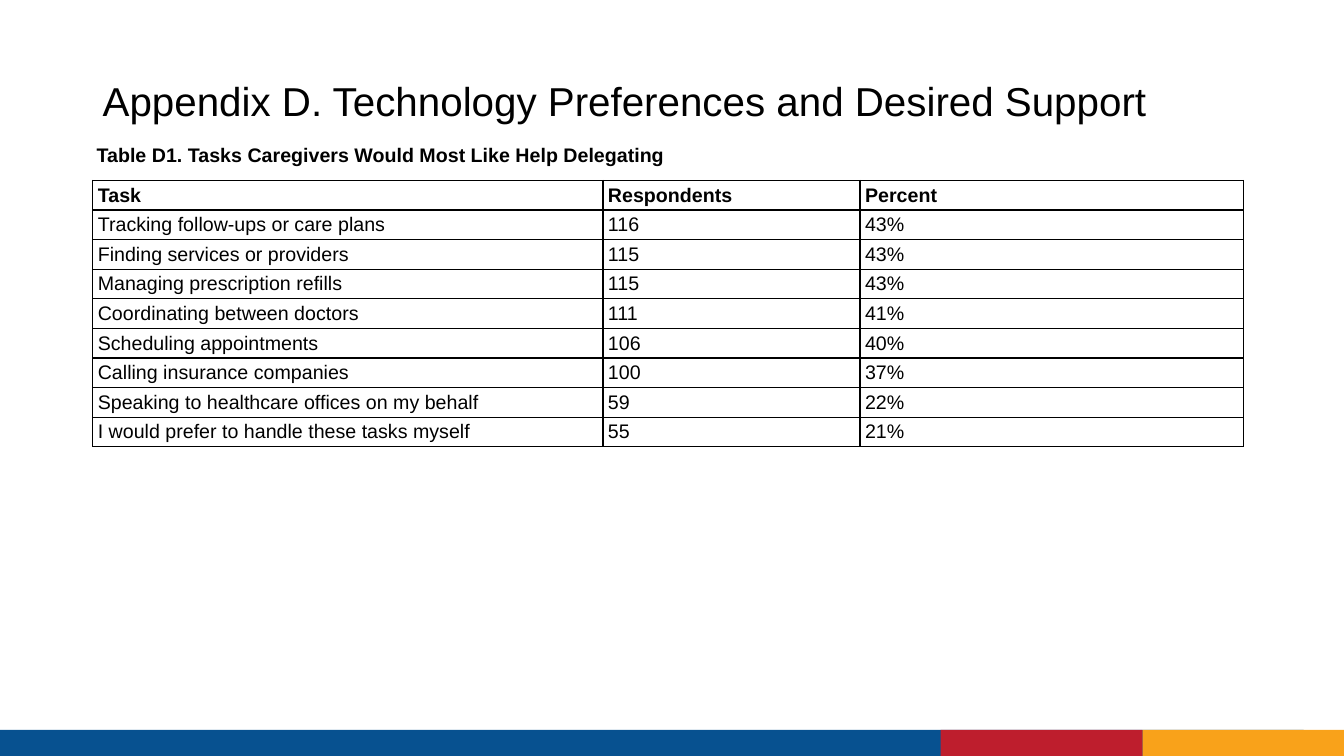
from lxml.etree import SubElement
from pptx import Presentation
from pptx.dml.color import RGBColor
from pptx.enum.shapes import MSO_SHAPE
from pptx.enum.text import MSO_ANCHOR
from pptx.oxml.ns import qn
from pptx.util import Inches, Pt

TASKS = [
    ("Task", "Respondents", "Percent"),
    ("Tracking follow-ups or care plans", "116", "43%"),
    ("Finding services or providers", "115", "43%"),
    ("Managing prescription refills", "115", "43%"),
    ("Coordinating between doctors", "111", "41%"),
    ("Scheduling appointments", "106", "40%"),
    ("Calling insurance companies", "100", "37%"),
    ("Speaking to healthcare offices on my behalf", "59", "22%"),
    ("I would prefer to handle these tasks myself", "55", "21%"),
]
COLUMN_WIDTHS = (5.06, 2.55, 3.8)


def rgb(value):
    return RGBColor.from_string(value)


def write(tf, text, size=14, bold=False, color="000000", spacing=None):
    p = tf.paragraphs[0]
    p.line_spacing = spacing
    r = p.add_run()
    r.text = text
    r.font.name = "Arial"
    r.font.size = Pt(size)
    r.font.bold = bold
    r.font.color.rgb = rgb(color)


def add_text(s, left, top, width, height, text, anchor=MSO_ANCHOR.TOP, **fmt):
    box = s.shapes.add_textbox(*map(Inches, (left, top, width, height)))
    tf = box.text_frame
    tf.word_wrap = True
    tf.vertical_anchor = anchor
    write(tf, text, **fmt)


def add_band(s, left, width, color):
    sp = s.shapes.add_shape(MSO_SHAPE.RECTANGLE, Inches(left), Inches(7.24),
                            Inches(width), Inches(0.27))
    sp.shadow.inherit = False
    sp.fill.solid()
    sp.fill.fore_color.rgb = rgb(color)
    sp.line.fill.background()


def add_borders(cell, color="000000", width=1):
    tcPr = cell._tc.get_or_add_tcPr()
    for i, side in enumerate(("a:lnL", "a:lnR", "a:lnT", "a:lnB")):
        ln = tcPr.makeelement(qn(side), {"w": str(Pt(width))})
        fill = SubElement(ln, qn("a:solidFill"))
        SubElement(fill, qn("a:srgbClr"), val=color)
        tcPr.insert(i, ln)


def format_cell(cell, text, bold):
    cell.fill.background()
    cell.margin_left = cell.margin_right = Inches(0.05)
    cell.margin_top = cell.margin_bottom = Inches(0.03)
    cell.vertical_anchor = MSO_ANCHOR.MIDDLE
    write(cell.text_frame, text, bold=bold)
    add_borders(cell)


def add_task_table(s):
    table = s.shapes.add_table(len(TASKS), len(COLUMN_WIDTHS), Inches(0.92), Inches(1.79),
                               Inches(sum(COLUMN_WIDTHS)), Inches(2.57)).table
    table.horz_banding = False
    for column, width in zip(table.columns, COLUMN_WIDTHS):
        column.width = Inches(width)
    for i, row in enumerate(TASKS):
        for j, text in enumerate(row):
            format_cell(table.cell(i, j), text, bold=i == 0)


def main():
    prs = Presentation()
    prs.slide_width = Inches(13.33)
    prs.slide_height = Inches(7.5)
    s = prs.slides.add_slide(prs.slide_layouts[6])
    add_band(s, 0, 12.93, "075190")
    add_band(s, 11.33, 2, "F9A21A")
    add_band(s, 9.33, 2, "BE1E2D")
    add_text(s, 0.92, 0.68, 11.31, 0.61,
             "Appendix D. Technology Preferences and Desired Support",
             anchor=MSO_ANCHOR.BOTTOM, size=28.8, spacing=0.9)
    add_text(s, 0.86, 1.37, 6.67, 0.34,
             "Table D1. Tasks Caregivers Would Most Like Help Delegating", bold=True)
    add_task_table(s)
    prs.save("out.pptx")


if __name__ == "__main__":
    main()
